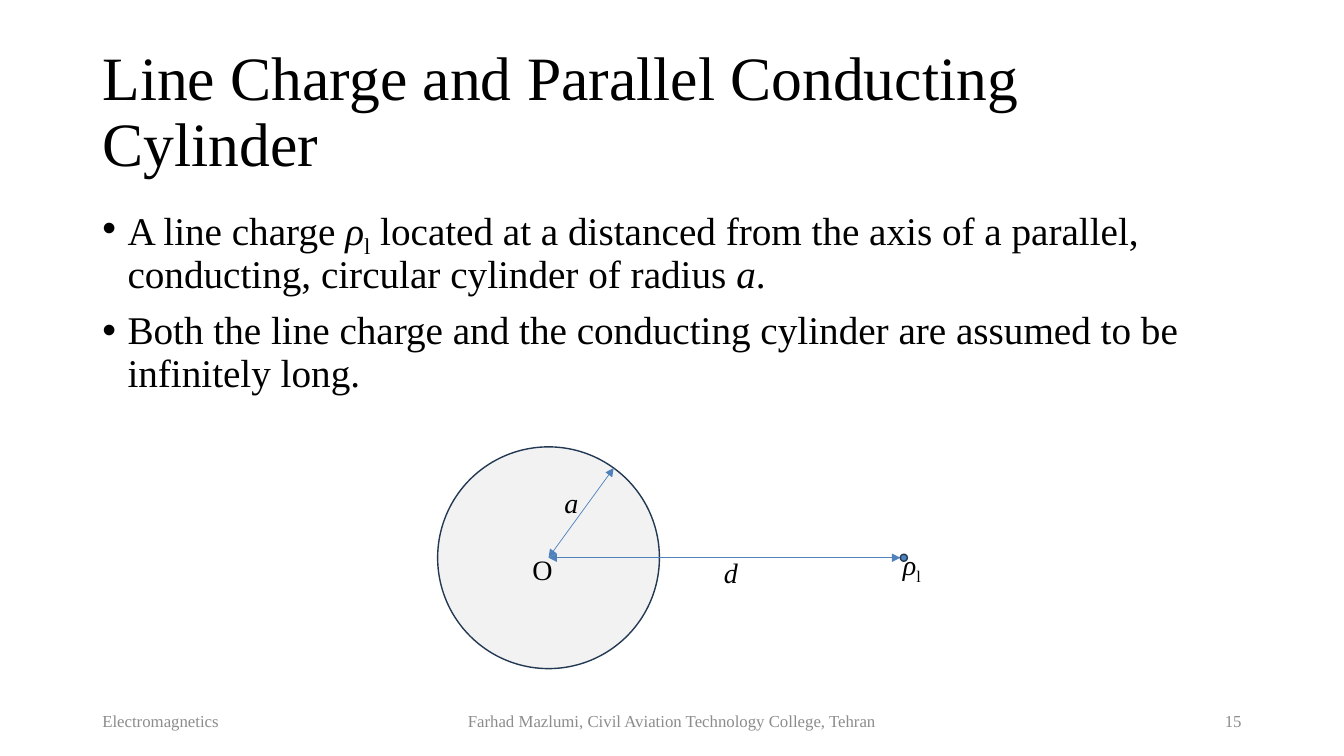
from math import cos, radians, sin

from lxml import etree
from pptx import Presentation
from pptx.dml.color import RGBColor
from pptx.enum.shapes import MSO_CONNECTOR, MSO_SHAPE
from pptx.enum.text import MSO_ANCHOR, MSO_AUTO_SIZE, PP_ALIGN
from pptx.oxml.ns import qn
from pptx.util import Inches, Pt

LEFT, MID, RIGHT = PP_ALIGN.LEFT, PP_ALIGN.CENTER, PP_ALIGN.RIGHT
TOP, CENTER = MSO_ANCHOR.TOP, MSO_ANCHOR.MIDDLE
FIXED = MSO_AUTO_SIZE.NONE
OVAL, STRAIGHT = MSO_SHAPE.OVAL, MSO_CONNECTOR.STRAIGHT
COLS, ROWS = 160, 90
WIDE, HIGH = 13.33, 7.5
FONT = "Times New Roman"
BLACK, GRAY, PALE, BLUE, NAVY = "000000", "8C8C8C", "F2F2F2", "4F81BD", "233953"
RHO = [("ρ", "i"), ("l", "sub")]


def color(code):
    return RGBColor.from_string(code)


class Board:
    """Style and current slide; places are in columns and rows."""

    def __init__(self, slide):
        self.slide = slide
        self.shapes = slide.shapes

    def cell(self, x, y):
        return Inches(x * WIDE / COLS), Inches(y * HIGH / ROWS)

    def fill_in(self, para, runs, size, tint):
        """Add (text, style) runs, where style is "", "i" or "sub"."""
        for text, style in runs:
            run = para.add_run()
            run.text = text
            font = run.font
            font.name, font.size = FONT, Pt(size)
            font.color.rgb = color(tint)
            font.italic = style == "i"
            if style == "sub":
                run._r.get_or_add_rPr().set("baseline", "-25000")

    def frame(self, shape, anchor):
        frame = shape.text_frame
        frame.word_wrap = True
        frame.auto_size = FIXED
        frame.vertical_anchor = anchor
        return frame

    def box(self, x, y, w, h, anchor=TOP):
        shape = self.shapes.add_textbox(*self.cell(x, y), *self.cell(w, h))
        return self.frame(shape, anchor)

    def title(self, text, x, y, w, h):
        shape = self.shapes.title
        shape.left, shape.top = self.cell(x, y)
        shape.width, shape.height = self.cell(w, h)
        para = self.frame(shape, CENTER).paragraphs[0]
        para.alignment, para.line_spacing = LEFT, 0.9
        self.fill_in(para, [(text, "")], 44, BLACK)

    def bullets(self, items, x, y, w, h):
        frame = self.box(x, y, w, h)
        for i, runs in enumerate(items):
            para = frame.add_paragraph() if i else frame.paragraphs[0]
            para.line_spacing = 0.9
            if i:
                para.space_before = Pt(10)
            props = para._p.get_or_add_pPr()
            props.set("marL", str(Inches(0.25)))
            props.set("indent", str(-Inches(0.25)))
            etree.SubElement(props, qn("a:buFont")).set("typeface", "Arial")
            etree.SubElement(props, qn("a:buChar")).set("char", "•")
            self.fill_in(para, runs, 28, BLACK)

    def footer(self, text, x, w, align):
        para = self.box(x, 83.4, w, 4.8, CENTER).paragraphs[0]
        para.alignment = align
        self.fill_in(para, [(text, "")], 12, GRAY)

    def label(self, runs, x, y):
        para = self.box(x, y, 5.3, 5.3).paragraphs[0]
        self.fill_in(para, runs, 20, BLACK)

    def disc(self, x, y, radius, fill):
        """Draw a circle around the point x, y."""
        corner = self.cell(x - radius, y - radius)
        shape = self.shapes.add_shape(OVAL, *corner, *self.cell(2 * radius, 2 * radius))
        shape.shadow.inherit = False
        shape.fill.solid()
        shape.fill.fore_color.rgb = color(fill)
        shape.line.color.rgb = color(NAVY)
        shape.line.width = Pt(1)

    def arrow(self, start, end):
        """Draw a thin line with a head at both ends."""
        link = self.shapes.add_connector(STRAIGHT, *self.cell(*start), *self.cell(*end))
        link.line.color.rgb = color(BLUE)
        link.line.width = Pt(0.5)
        for tag in ("a:headEnd", "a:tailEnd"):
            etree.SubElement(link.line._get_or_add_ln(), qn(tag)).set("type", "triangle")
        etree.SubElement(link._element.spPr, qn("a:effectLst"))


def main():
    deck = Presentation()
    deck.slide_width, deck.slide_height = Inches(WIDE), Inches(HIGH)
    board = Board(deck.slides.add_slide(deck.slide_layouts[5]))

    board.title("Line Charge and Parallel Conducting Cylinder", 11, 4.8, 138, 17.4)
    board.bullets([
        [("A line charge ", ""), *RHO,
         (" located at a distanced from the axis of a parallel, "
          "conducting, circular cylinder of radius ", ""),
         ("a", "i"), (".", "")],
        [("Both the line charge and the conducting cylinder "
          "are assumed to be infinitely long.", "")],
    ], 11, 24, 138, 24.7)

    board.footer("Electromagnetics", 11, 36, LEFT)
    board.footer("Farhad Mazlumi, Civil Aviation Technology College, Tehran", 53, 54, MID)
    board.footer("15", 113, 36, RIGHT)

    x, y = axis = 65.3, 66.4
    radius, dot, gap = 13.2, 0.42, 42.3
    angle = radians(54)
    rim = x + radius * cos(angle), y - radius * sin(angle)
    board.disc(x, y, radius, PALE)
    board.arrow((x + gap - dot, y), axis)
    board.arrow(rim, axis)
    board.label([("d", "i")], 85, 65.5)
    board.label([("a", "i")], 66, 57.2)
    board.label([("O", "")], 62.2, 65.2)
    board.label(RHO, 106.3, 64.6)
    board.disc(x + gap, y, dot, BLUE)

    deck.save("out.pptx")


if __name__ == "__main__":
    main()
